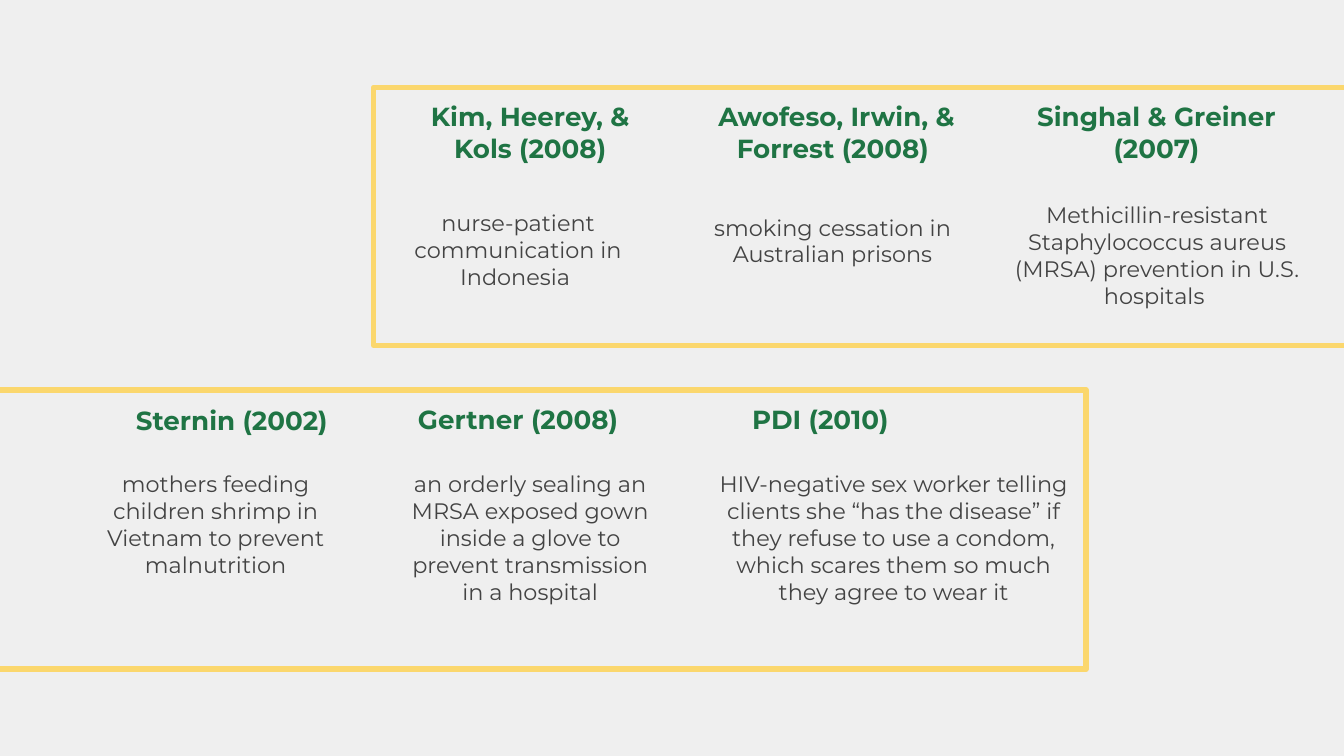
from pptx import Presentation
from pptx.dml.color import RGBColor
from pptx.enum.shapes import MSO_SHAPE
from pptx.enum.text import MSO_ANCHOR, PP_ALIGN
from pptx.util import Inches, Pt

BACKGROUND, YELLOW, GREEN, GRAY = "EFEFEF", "FBD76D", "1F7444", "434343"
SLIDE_W = 10
SLIDE_H = SLIDE_W * 9 / 16
HEAD_W, HEAD_H, BODY_H = 2.05, 0.63, 0.87

# Frames: left, top, width, height
FRAMES = [(-0.16, 2.9, 8.24, 2.08), (2.78, 0.65, 7.38, 1.92)]

# Studies: heading, (left, top), description, (left, top, width)
STUDIES = [
    ("Sternin (2002)", (0.7, 2.91),
     "mothers feeding children shrimp in Vietnam to prevent malnutrition",
     (0.58, 3.4, 2.05)),
    ("Gertner (2008)", (2.83, 2.9),
     "an orderly sealing an MRSA exposed gown inside a glove to prevent "
     "transmission in a hospital",
     (2.92, 3.4, 2.05)),
    ("PDI (2010)", (5.08, 2.9),
     "HIV-negative sex worker telling clients she “has the disease” if they "
     "refuse to use a condom, which scares them so much they agree to wear it",
     (5.21, 3.4, 2.88)),
    ("Kim, Heerey, & Kols (2008)", (2.92, 0.65),
     "nurse-patient communication in Indonesia ",
     (2.83, 1.46, 2.05)),
    ("Awofeso, Irwin, & Forrest (2008) ", (5.2, 0.65),
     "smoking cessation in Australian prisons",
     (5.17, 1.49, 2.05)),
    ("Singhal & Greiner (2007)", (7.58, 0.65),
     "Methicillin-resistant Staphylococcus aureus (MRSA) prevention in U.S. "
     "hospitals ",
     (7.3, 1.4, 2.62)),
]


def color(hex_text):
    return RGBColor.from_string(hex_text)


def write(tf, text, size=12, fill=GRAY, bold=False, font="Montserrat"):
    p = tf.paragraphs[0]
    p.alignment = PP_ALIGN.CENTER
    r = p.add_run()
    r.text = text
    r.font.name = font
    r.font.size = Pt(size)
    r.font.bold = bold
    r.font.color.rgb = color(fill)


class Builder:
    """Holds the current slide and draws its elements in one style."""

    def __init__(self, s):
        self.s = s
        fill = s.background.fill
        fill.solid()
        fill.fore_color.rgb = color(BACKGROUND)

    def frame(self, *box):
        sp = self.s.shapes.add_shape(MSO_SHAPE.RECTANGLE, *map(Inches, box))
        sp.shadow.inherit = False
        sp.fill.background()
        sp.line.color.rgb = color(YELLOW)
        sp.line.width = Pt(3)

    def text(self, box, text, **style):
        tf = self.s.shapes.add_textbox(*map(Inches, box)).text_frame
        tf.word_wrap = True
        tf.vertical_anchor = MSO_ANCHOR.TOP
        tf.margin_left = tf.margin_right = Inches(0.1)
        tf.margin_top = tf.margin_bottom = Inches(0.1)
        write(tf, text, **style)

    def study(self, heading, head_at, body, body_at):
        self.text((*head_at, HEAD_W, HEAD_H), heading,
                  size=14, fill=GREEN, bold=True)
        self.text((*body_at, BODY_H), body)


def main():
    prs = Presentation()
    prs.slide_width, prs.slide_height = Inches(SLIDE_W), Inches(SLIDE_H)
    b = Builder(prs.slides.add_slide(prs.slide_layouts[6]))

    # Yellow frames behind the two rows
    for box in FRAMES:
        b.frame(*box)

    # Headings and descriptions
    for study in STUDIES:
        b.study(*study)

    prs.save("out.pptx")


if __name__ == "__main__":
    main()
